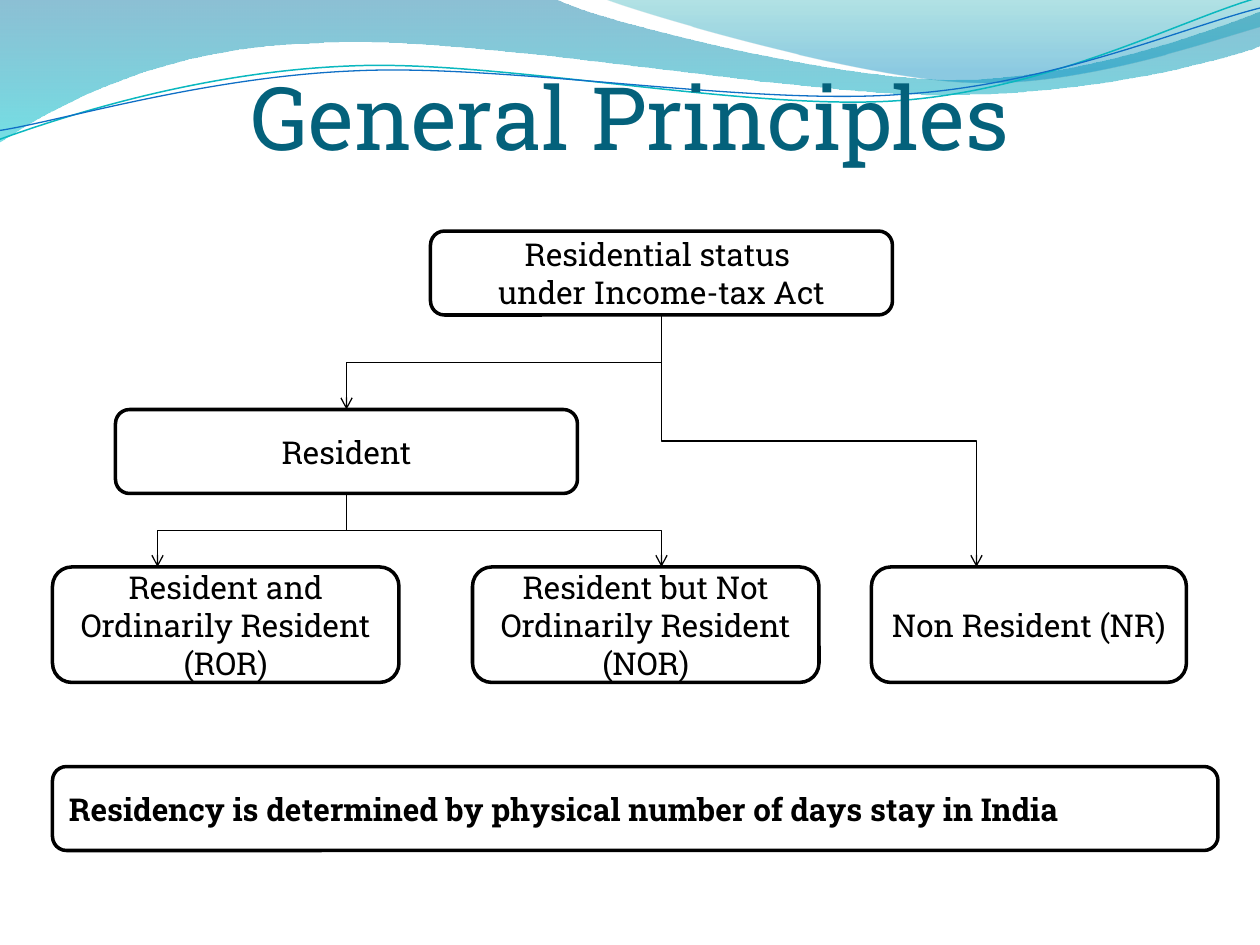
from dataclasses import dataclass

from pptx import Presentation
from pptx.dml.color import RGBColor
from pptx.enum.shapes import MSO_CONNECTOR, MSO_SHAPE
from pptx.enum.text import MSO_ANCHOR, MSO_AUTO_SIZE, PP_ALIGN
from pptx.oxml.ns import qn
from pptx.oxml.xmlchemy import OxmlElement
from pptx.util import Cm, Pt

ELBOW = MSO_CONNECTOR.ELBOW
ROUND = MSO_SHAPE.ROUNDED_RECTANGLE
MIDDLE, BOTTOM = MSO_ANCHOR.MIDDLE, MSO_ANCHOR.BOTTOM
LEFT, CENTER = PP_ALIGN.LEFT, PP_ALIGN.CENTER
NO_FIT = MSO_AUTO_SIZE.NONE

WIDTH, HEIGHT = Cm(25.4), Cm(19.05)
GRID = WIDTH // 120  # one step of the chart's grid
TILT = 357.3         # turn of the thin waves


@dataclass(frozen=True)
class Theme:
    font: str = "Roboto Slab"
    head: str = "04617B"
    ink: str = "000000"
    teal: str = "0AB8BF"
    blue: str = "0F6FC6"
    head_size: int = 50
    size: int = 18
    border: float = 2
    thin: float = 0.75


THEME = Theme()

# Wave outlines in tenths of the band's width: parts of one point (straight)
# or three points (Bezier curve), the first part being the start.
# Gradient stops are position, colour and opacity in percent.
FILLS = [
    ([[(0, 0)], [(4.4, -0.01)],
      [(4.76, 0.17), (6.64, 0.63), (7.58, 0.63)],
      [(8.53, 0.63), (9.58, 0.26), (10, 0.09)],
      [(10.01, 0.36)],
      [(9.83, 0.44), (8.7, 0.76), (7.46, 0.75)],
      [(6.22, 0.75), (3.82, 0.28), (2.57, 0.34)],
      [(1.29, 0.36), (0.46, 0.83), (-0.01, 1.13)]],
     [(0, "0074A1", 45), (1, "00C6CF", 55)]),
    ([[(4.79, -0.01)],
      [(5.09, 0.11), (6.82, 0.62), (7.69, 0.65)],
      [(8.56, 0.69), (9.61, 0.32), (10, 0.21)],
      [(10, 0)]],
     [(0, "00A1A9", 30), (0.8, "008BBF", 45)]),
]
STROKES = [
    ([[(-0.02, 0.87)],
      [(0.47, 0.72), (1.58, 0.41), (2.78, 0.42)],
      [(3.96, 0.42), (5.91, 0.93), (7.12, 0.9)],
      [(8.32, 0.87), (9.4, 0.36), (10, 0.22)]], THEME.teal, 0.85),
    ([[(-0.02, 0.8)],
      [(0.46, 0.75), (1.64, 0.45), (2.83, 0.46)],
      [(4.03, 0.46), (5.96, 0.89), (7.16, 0.85)],
      [(8.35, 0.83), (9.42, 0.42), (10.02, 0.3)]], THEME.blue, THEME.thin),
]


def rgb(code):
    return RGBColor.from_string(code)


def pen(line, color, width):
    line.color.rgb = rgb(color)
    line.width = Pt(width)


def write(frame, lines, size, color, align, bold=False):
    for i, text in enumerate(lines):
        para = frame.add_paragraph() if i else frame.paragraphs[0]
        para.alignment = align
        run = para.add_run()
        run.text = text
        font = run.font
        font.name, font.size, font.bold = THEME.font, Pt(size), bold
        font.color.rgb = rgb(color)


def bend(shape, parts):
    """Turn each part of three straight steps into one Bezier curve."""
    track = next(shape._element.iter(qn("a:path")))
    steps = iter(list(track))
    for part in parts:
        group = [next(steps) for _ in part]
        if len(group) == 3:
            curve = OxmlElement("a:cubicBezTo")
            group[0].addprevious(curve)
            for step in group:
                curve.append(step[0])
                track.remove(step)


def wave(slide, box, parts, close):
    left, top, width = box
    unit = width / 10
    spots = [(round(left + x * unit), round(top + y * unit))
             for part in parts for x, y in part]
    maker = slide.shapes.build_freeform(*spots[0])
    maker.add_line_segments(spots[1:], close=close)
    shape = maker.convert_to_shape()
    bend(shape, parts)
    shape.shadow.inherit = False
    return shape


def shade(shape, stops):
    """Fill from top to bottom with translucent colours."""
    fill = shape.fill
    fill.gradient()
    fill.gradient_angle = 270
    for stop, (place, color, _) in zip(fill.gradient_stops, stops):
        stop.position = place
        stop.color.rgb = rgb(color)
    marks = list(shape._element.spPr.iter(qn("a:srgbClr")))
    for mark, (_, _, part) in zip(marks, stops):
        alpha = OxmlElement("a:alpha")
        alpha.set("val", str(part * 1000))
        mark.append(alpha)
    shape.line.fill.background()


def band(slide, box):
    for parts, stops in FILLS:
        shade(wave(slide, box, parts, True), stops)
    for parts, color, width in STROKES:
        shape = wave(slide, box, parts, False)
        shape.rotation = TILT
        shape.fill.background()
        pen(shape.line, color, width)


def title(slide, box, text):
    shape = slide.shapes.title
    shape.left, shape.top, shape.width, shape.height = box
    frame = shape.text_frame
    frame.auto_size, frame.vertical_anchor = NO_FIT, BOTTOM
    frame.margin_left = frame.margin_right = frame.margin_bottom = 0
    write(frame, [text], THEME.head_size, THEME.head, CENTER)
    slide.shapes._spTree.append(shape._element)  # in front of the waves


def card(slide, box, lines, align=CENTER, bold=False):
    shape = slide.shapes.add_shape(ROUND, *box)
    shape.shadow.inherit = False
    shape.fill.background()
    pen(shape.line, THEME.ink, THEME.border)
    frame = shape.text_frame
    frame.word_wrap, frame.vertical_anchor = True, MIDDLE
    write(frame, lines, THEME.size, THEME.ink, align, bold)


def branch(slide, start, end):
    """Draw an elbow arrow that leaves downwards and arrives downwards."""
    (x1, y1), (x2, y2) = start, end
    drop, span = y2 - y1, abs(x2 - x1)
    left, top = (x1 + x2 - drop) // 2, (y1 + y2 - span) // 2
    ends = [left, left + drop]
    if x2 > x1:
        ends.reverse()
    link = slide.shapes.add_connector(ELBOW, ends[0], top, ends[1], top + span)
    pen(link.line, THEME.ink, THEME.thin)
    props = link._element.spPr
    props.find(qn("a:xfrm")).set("rot", str((270 if x2 > x1 else 90) * 60000))
    tip = OxmlElement("a:tailEnd")
    tip.set("type", "arrow")
    props.find(qn("a:ln")).append(tip)
    props.append(OxmlElement("a:effectLst"))


def tree(slide, left, top):
    def spot(x, y):
        return left + x * GRID, top + y * GRID

    cards = [
        (36, 0, 44, 8, ["Residential status ", "under Income-tax Act"]),
        (6, 17, 44, 8, ["Resident"]),
        (0, 32, 33, 11, ["Resident and Ordinarily Resident (ROR)"]),
        (40, 32, 33, 11, ["Resident but Not Ordinarily Resident (NOR)"]),
        (78, 32, 30, 11, ["Non Resident (NR)"]),
    ]
    for x, y, wide, high, lines in cards:
        card(slide, (*spot(x, y), wide * GRID, high * GRID), lines)
    status, local = spot(58, 8), spot(28, 25)
    for start, end in [(status, (28, 17)), (status, (88, 32)),
                       (local, (10, 32)), (local, (58, 32))]:
        branch(slide, start, spot(*end))


def main():
    deck = Presentation()
    deck.slide_width, deck.slide_height = WIDTH, HEIGHT
    slide = deck.slides.add_slide(deck.slide_layouts[5])
    band(slide, (0, 0, WIDTH))
    title(slide, (Cm(1.27), Cm(1.06), Cm(22.86), Cm(2.33)),
          "General Principles")
    edge = 5 * GRID
    tree(slide, edge, 22 * GRID)
    card(slide, (edge, 73 * GRID, 111 * GRID, 8 * GRID),
         ["Residency is determined by physical number of days stay in India"],
         LEFT, True)
    deck.save("out.pptx")


if __name__ == "__main__":
    main()
